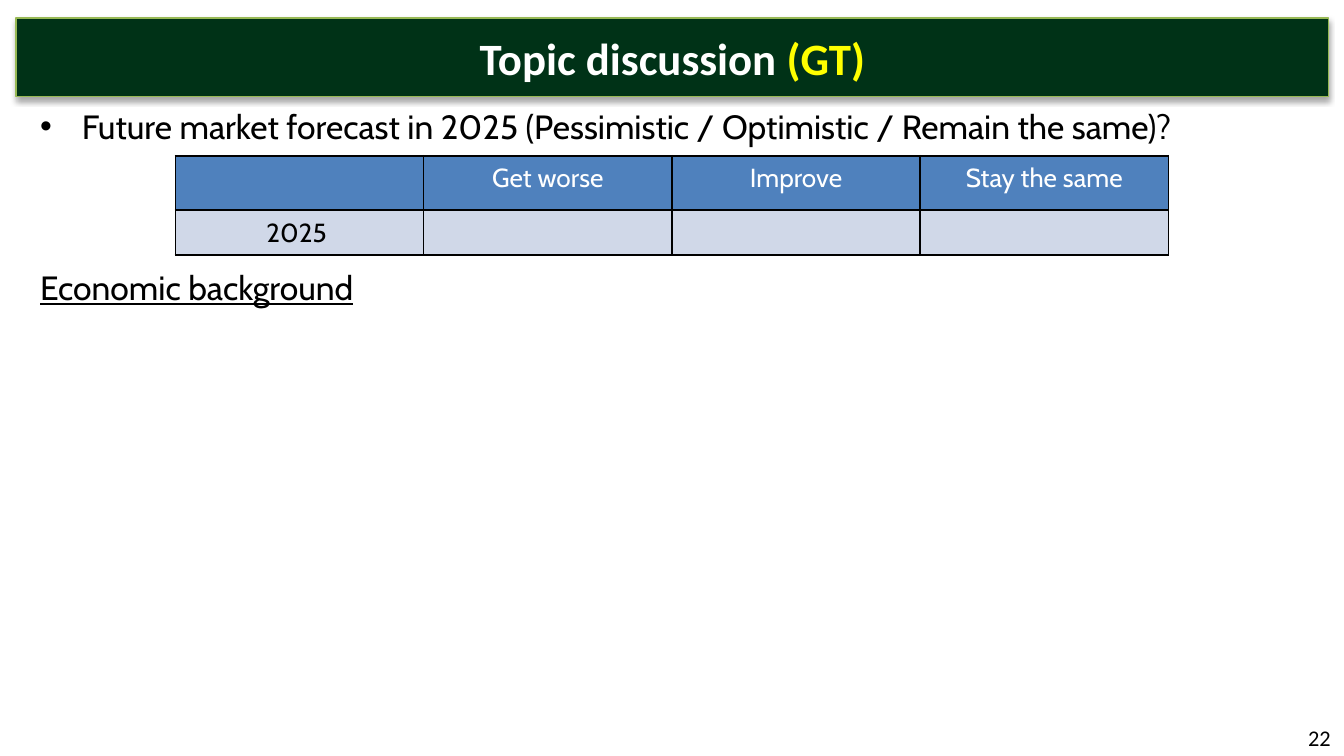
from dataclasses import dataclass

from lxml.etree import SubElement
from pptx import Presentation
from pptx.dml.color import RGBColor
from pptx.enum.shapes import MSO_SHAPE
from pptx.enum.text import MSO_ANCHOR, PP_ALIGN
from pptx.oxml import parse_xml
from pptx.oxml.ns import qn
from pptx.util import Inches, Pt

# Widescreen, 16:9
SLIDE_WIDTH = Inches(10)
SLIDE_HEIGHT = SLIDE_WIDTH * 9 // 16
BLACK = RGBColor(0, 0, 0)
WHITE = RGBColor(0xFF, 0xFF, 0xFF)
YELLOW = RGBColor(0xFF, 0xFF, 0)
DARK_GREEN = RGBColor(0, 0x32, 0x17)
LIME = RGBColor(0x98, 0xB9, 0x55)
HEADER_BLUE = RGBColor(0x4F, 0x81, 0xBD)
ROW_BLUE = RGBColor(0xD0, 0xD8, 0xE8)
DRAWING_NS = "http://schemas.openxmlformats.org/drawingml/2006/main"


@dataclass(frozen=True)
class Area:
    """A place on the slide, in percent of its width and height."""
    left: float
    top: float
    width: float
    height: float

    def emu(self) -> tuple[int, int, int, int]:
        return (across(self.left), down(self.top),
                across(self.width), down(self.height))


@dataclass(frozen=True)
class ForecastRow:
    labels: tuple[str, ...]
    height: float
    fill: RGBColor
    ink: RGBColor


TITLE = Area(1.2, 2.4, 97.65, 10.4)
BODY = Area(2, 13.15, 96.1, 35.4)
FORECAST = Area(13.05, 20.6, 73.9, 13.1)
PAGE_NUMBER = Area(76.7, 94.95, 23.3, 5.3)
FORECAST_ROWS = (
    ForecastRow(("", "Get worse", "Improve", "Stay the same"), 7.2, HEADER_BLUE, WHITE),
    ForecastRow(("2025 ", "", "", ""), 5.9, ROW_BLUE, BLACK),
)


def across(percent: float) -> int:
    return round(SLIDE_WIDTH * percent / 100)


def down(percent: float) -> int:
    return round(SLIDE_HEIGHT * percent / 100)


def write(paragraph, text: str, *, size: float, font: str = "Cabin",
          color: RGBColor = BLACK, bold: bool = False, underline: bool = False,
          align: PP_ALIGN = PP_ALIGN.LEFT) -> None:
    paragraph.alignment = align
    if not text:
        # An empty cell still needs its text size to keep the row low
        SubElement(paragraph._p, qn("a:endParaRPr"), sz=str(size * 100))
        return
    run = paragraph.add_run()
    run.text = text
    run.font.size, run.font.name = Pt(size), font
    run.font.bold, run.font.underline = bold, underline
    run.font.color.rgb = color


def add_bullet(paragraph, indent: int) -> None:
    properties = paragraph._p.get_or_add_pPr()
    properties.set("marL", str(indent))
    properties.set("indent", str(-indent))
    SubElement(properties, qn("a:buFont"), typeface="Arial")
    SubElement(properties, qn("a:buChar"), char="•")


def add_shadow(shape) -> None:
    shape.shadow.inherit = False
    effects = shape._element.spPr.find(qn("a:effectLst"))
    effects.append(parse_xml(
        f'<a:outerShdw xmlns:a="{DRAWING_NS}" blurRad="{Pt(3.1)}" dist="{Pt(1.8)}" '
        'dir="5400000" rotWithShape="0"><a:srgbClr val="000000">'
        '<a:alpha val="35000"/></a:srgbClr></a:outerShdw>'))


def add_borders(cell) -> None:
    properties = cell._tc.get_or_add_tcPr()
    for position, side in enumerate(("lnL", "lnR", "lnT", "lnB")):
        properties.insert(position, parse_xml(
            f'<a:{side} xmlns:a="{DRAWING_NS}" w="{Pt(1)}"><a:solidFill>'
            f'<a:srgbClr val="{BLACK}"/></a:solidFill></a:{side}>'))


def add_title(slide) -> None:
    banner = slide.shapes.add_shape(MSO_SHAPE.RECTANGLE, *TITLE.emu())
    banner.fill.solid()
    banner.fill.fore_color.rgb = DARK_GREEN
    banner.line.color.rgb, banner.line.width = LIME, Pt(0.75)
    add_shadow(banner)
    frame = banner.text_frame
    frame.margin_left = frame.margin_right = frame.margin_top = frame.margin_bottom = 0
    frame.vertical_anchor = MSO_ANCHOR.MIDDLE
    for text, color in (("Topic discussion ", WHITE), ("(GT)", YELLOW)):
        write(frame.paragraphs[0], text, size=24, font="Calibri", color=color,
              bold=True, align=PP_ALIGN.CENTER)


def add_text_frame(slide, area: Area):
    frame = slide.shapes.add_textbox(*area.emu()).text_frame
    frame.word_wrap = True
    return frame


def add_forecast(slide) -> None:
    columns = len(FORECAST_ROWS[0].labels)
    table = slide.shapes.add_table(len(FORECAST_ROWS), columns, *FORECAST.emu()).table
    for column in table.columns:
        column.width = across(FORECAST.width / columns)
    for row, content in zip(table.rows, FORECAST_ROWS):
        row.height = down(content.height)
        for cell, label in zip(row.cells, content.labels):
            cell.fill.solid()
            cell.fill.fore_color.rgb = content.fill
            add_borders(cell)
            write(cell.text_frame.paragraphs[0], label, size=14,
                  color=content.ink, align=PP_ALIGN.CENTER)


def main() -> None:
    presentation = Presentation()
    presentation.slide_width, presentation.slide_height = SLIDE_WIDTH, SLIDE_HEIGHT
    slide = presentation.slides.add_slide(presentation.slide_layouts[6])

    add_title(slide)

    # Page number
    write(add_text_frame(slide, PAGE_NUMBER).paragraphs[0], "22", size=12,
          font="Calibri", align=PP_ALIGN.RIGHT)

    # Question above the table, heading below it
    body = add_text_frame(slide, BODY)
    question = body.paragraphs[0]
    write(question, "Future market forecast in 2025 (Pessimistic / Optimistic / Remain the same)?",
          size=18)
    add_bullet(question, across(3.1))
    background = body.add_paragraph()
    background.space_before = Pt(64.5)
    write(background, "Economic background", size=18, underline=True)

    add_forecast(slide)
    presentation.save("out.pptx")


if __name__ == "__main__":
    main()
